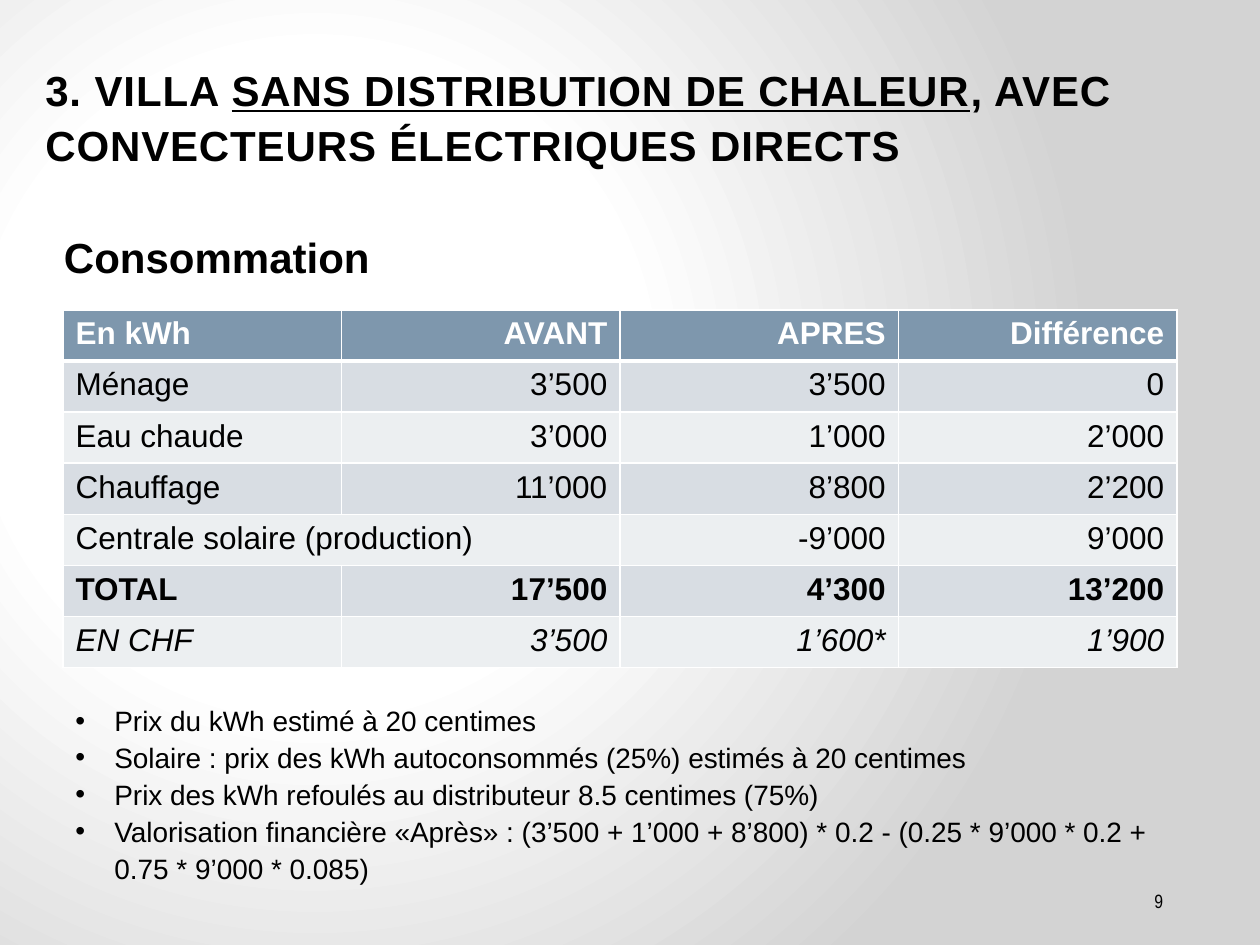
from dataclasses import dataclass

from lxml import etree
from pptx import Presentation
from pptx.dml.color import RGBColor
from pptx.enum.text import MSO_ANCHOR, MSO_AUTO_SIZE, PP_ALIGN
from pptx.oxml import parse_xml
from pptx.oxml.ns import nsdecls, qn
from pptx.util import Inches, Pt

LEFT, RIGHT = PP_ALIGN.LEFT, PP_ALIGN.RIGHT
TOP, MIDDLE, BOTTOM = MSO_ANCHOR.TOP, MSO_ANCHOR.MIDDLE, MSO_ANCHOR.BOTTOM
NO_AUTOFIT = MSO_AUTO_SIZE.NONE
TITLE_ONLY = 5


@dataclass(frozen=True)
class Theme:
    font: str = "Arial"
    number_font: str = "Arial Narrow"
    text: str = "000000"
    white: str = "FFFFFF"
    backdrop: str = "D3D3D3"
    header: str = "7E97AD"
    bands: tuple = ("D8DDE3", "ECEFF1")
    heading_size: int = 24
    table_size: int = 18
    note_size: int = 16
    number_size: int = 11
    line_spacing: float = 1.1


THEME = Theme()

TITLE = [
    ("3. VILLA ", False),
    ("SANS DISTRIBUTION DE CHALEUR", True),
    (", AVEC CONVECTEURS ÉLECTRIQUES DIRECTS", False),
]
CONSUMPTION = [
    ("En kWh", "AVANT", "APRES", "Différence"),
    ("Ménage", "3’500", "3’500", "0"),
    ("Eau chaude", "3’000", "1’000", "2’000"),
    ("Chauffage", "11’000", "8’800", "2’200"),
    ("Centrale solaire (production)", None, "-9’000", "9’000"),
    ("TOTAL", "17’500", "4’300", "13’200"),
    ("EN CHF", "3’500", "1’600*", "1’900"),
]
NOTES = [
    "Prix du kWh estimé à 20 centimes",
    "Solaire : prix des kWh autoconsommés (25%) estimés à 20 centimes",
    "Prix des kWh refoulés au distributeur 8.5 centimes (75%)",
    "Valorisation financière «Après» : (3’500 + 1’000 + 8’800) * 0.2 - "
    "(0.25 * 9’000 * 0.2 + 0.75 * 9’000 * 0.085)",
]


def add_run(paragraph, text, size, color=THEME.text, font=THEME.font, bold=False, italic=False):
    run = paragraph.add_run()
    run.text = text
    run.font.name = font
    run.font.size = Pt(size)
    run.font.bold = bold
    run.font.italic = italic
    run.font.color.rgb = RGBColor.from_string(color)
    return run


def add_text_frame(slide, box, anchor=TOP):
    frame = slide.shapes.add_textbox(*map(Inches, box)).text_frame
    frame.word_wrap = True
    frame.vertical_anchor = anchor
    return frame


def set_background(slide):
    stops = ((0, THEME.white), (41, THEME.white), (100, THEME.backdrop))
    stop_xml = "".join(
        f'<a:gs pos="{position * 1000}"><a:srgbClr val="{color}"/></a:gs>'
        for position, color in stops
    )
    background = parse_xml(
        f'<p:bg {nsdecls("p", "a")}><p:bgPr><a:gradFill rotWithShape="1">'
        f'<a:gsLst>{stop_xml}</a:gsLst><a:path path="circle">'
        '<a:fillToRect l="50000" t="80000" r="100000" b="100000"/></a:path>'
        "</a:gradFill><a:effectLst/></p:bgPr></p:bg>"
    )
    slide._element.find(qn("p:cSld")).insert(0, background)


def place_title(slide, box):
    title = slide.shapes.title
    title.left, title.top, title.width, title.height = map(Inches, box)
    frame = title.text_frame
    frame.word_wrap = True
    frame.auto_size = NO_AUTOFIT
    frame.vertical_anchor = BOTTOM
    paragraph = frame.paragraphs[0]
    paragraph.alignment = LEFT
    paragraph.line_spacing = THEME.line_spacing
    for text, underlined in TITLE:
        run = add_run(paragraph, text, THEME.heading_size, bold=True)
        run.font.underline = underlined
        run.font._element.set("spc", "50")


def add_subtitle(slide, box):
    paragraph = add_text_frame(slide, box).paragraphs[0]
    paragraph.line_spacing = THEME.line_spacing
    add_run(paragraph, "Consommation", THEME.heading_size, bold=True)


def set_borders(cell, bottom_width):
    properties = cell._tc.get_or_add_tcPr()
    widths = (("lnL", 1), ("lnR", 1), ("lnT", 1), ("lnB", bottom_width))
    for index, (side, width) in enumerate(widths):
        line = parse_xml(
            f'<a:{side} {nsdecls("a")} w="{Pt(width)}"><a:solidFill>'
            f'<a:srgbClr val="{THEME.white}"/></a:solidFill></a:{side}>'
        )
        properties.insert(index, line)


def add_consumption_table(slide, box):
    left, top, width, height = map(Inches, box)
    row_count, column_count = len(CONSUMPTION), len(CONSUMPTION[0])
    table = slide.shapes.add_table(row_count, column_count, left, top, width, height).table
    for row_index, values in enumerate(CONSUMPTION):
        is_header = row_index == 0
        fill = THEME.header if is_header else THEME.bands[(row_index - 1) % 2]
        for column_index, value in enumerate(values):
            cell = table.cell(row_index, column_index)
            cell.fill.solid()
            cell.fill.fore_color.rgb = RGBColor.from_string(fill)
            set_borders(cell, 3 if is_header else 1)
            if value is None:
                table.cell(row_index, column_index - 1).merge(cell)
                continue
            paragraph = cell.text_frame.paragraphs[0]
            paragraph.alignment = RIGHT if column_index else LEFT
            add_run(
                paragraph,
                value,
                THEME.table_size,
                color=THEME.white if is_header else THEME.text,
                bold=is_header or values[0] == "TOTAL",
                italic=values[0] == "EN CHF",
            )


def add_notes_list(slide, box):
    frame = add_text_frame(slide, box)
    for index, note in enumerate(NOTES):
        paragraph = frame.add_paragraph() if index else frame.paragraphs[0]
        paragraph.level = 1
        paragraph.line_spacing = THEME.line_spacing
        properties = paragraph._p.get_or_add_pPr()
        properties.set("marL", str(Inches(0.81)))
        properties.set("indent", str(Inches(-0.31)))
        etree.SubElement(properties, qn("a:buFont"), typeface=THEME.font)
        etree.SubElement(properties, qn("a:buChar"), char="•")
        add_run(paragraph, note, THEME.note_size)


def add_slide_number(slide, box):
    paragraph = add_text_frame(slide, box, MIDDLE).paragraphs[0]
    paragraph.alignment = RIGHT
    add_run(paragraph, "9", THEME.number_size, font=THEME.number_font)


def main():
    presentation = Presentation()
    presentation.slide_width = Inches(10)
    presentation.slide_height = Inches(7.5)
    slide = presentation.slides.add_slide(presentation.slide_layouts[TITLE_ONLY])
    set_background(slide)
    place_title(slide, (0.26, 0.15, 9.59, 1.25))
    add_slide_number(slide, (8.25, 6.95, 1.08, 0.4))
    add_subtitle(slide, (0.41, 1.75, 8.84, 0.51))
    add_consumption_table(slide, (0.5, 2.46, 8.84, 2.84))
    add_notes_list(slide, (0, 5.51, 9.33, 1.56))
    presentation.save("out.pptx")


if __name__ == "__main__":
    main()
